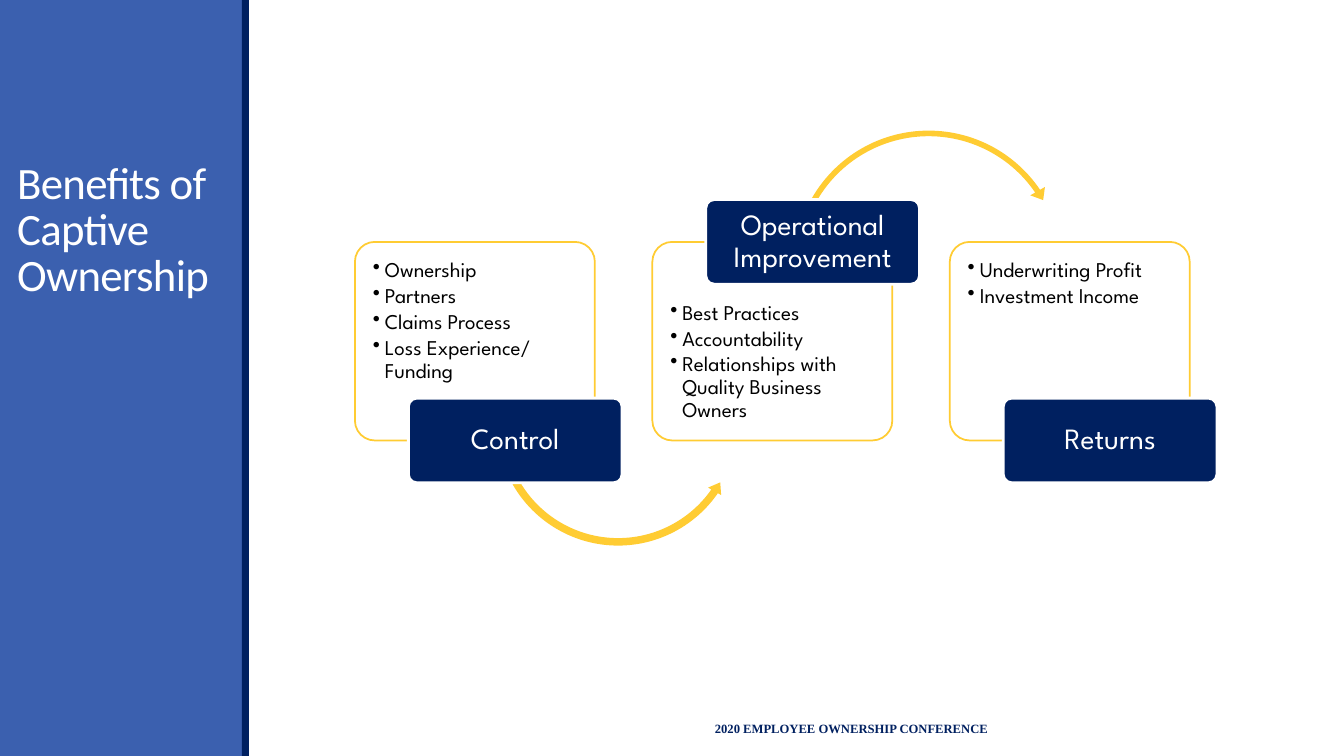
from dataclasses import dataclass
from typing import Optional

from lxml import etree
from pptx import Presentation
from pptx import util as u
from pptx.dml import color
from pptx.enum import shapes, text
from pptx.oxml import ns

COLORS = {
    "blue": "3B60AF",
    "navy": "002060",
    "gold": "FFCC33",
    "white": "FFFFFF",
    "black": "000000",
}
BODY_FONT = "League Spartan"
PANEL_LEFT, PANEL_TOP, PANEL_STEP = 3.52, 2.4, 2.95
PANEL_WIDTH, PANEL_HEIGHT = 2.38, 1.97
LABEL_WIDTH, LABEL_HEIGHT, LABEL_OFFSET = 2.12, 0.84, 0.53


@dataclass(frozen=True)
class Arrow:
    kind: shapes.MSO_SHAPE
    left: float
    top: float
    size: float
    adjustments: tuple[float, ...]


@dataclass(frozen=True)
class Benefit:
    name: str
    points: tuple[str, ...]
    label_on_top: bool = False
    arrow: Optional[Arrow] = None


BENEFITS = (
    Benefit(
        "Control",
        ("Ownership", "Partners", "Claims Process", "Loss Experience/\vFunding"),
        arrow=Arrow(shapes.MSO_SHAPE.LEFT_CIRCULAR_ARROW, 4.89, 2.97, 2.48,
                    (0.03, 3.09, 20.85, 90.25, 0.03)),
    ),
    Benefit(
        "Operational Improvement",
        ("Best Practices", "Accountability", "Relationships with Quality Business Owners"),
        label_on_top=True,
        arrow=Arrow(shapes.MSO_SHAPE.CIRCULAR_ARROW, 7.82, 1.24, 2.78,
                    (0.02, 2.74, 195.51, 125.76, 0.03)),
    ),
    Benefit("Returns", ("Underwriting Profit", "Investment Income")),
)


def rgb(name: str) -> color.RGBColor:
    return color.RGBColor.from_string(COLORS[name])


def add_filled(slide, kind, left: float, top: float, width: float, height: float,
               fill: str, line: Optional[str] = None, line_width: float = 1):
    shape = slide.shapes.add_shape(
        kind, u.Inches(left), u.Inches(top), u.Inches(width), u.Inches(height))
    shape.shadow.inherit = False
    shape.fill.solid()
    shape.fill.fore_color.rgb = rgb(fill)
    if line:
        shape.line.color.rgb = rgb(line)
        shape.line.width = u.Pt(line_width)
    else:
        shape.line.fill.background()
    return shape


def set_margins(frame, left: float, top: float, right: float, bottom: float) -> None:
    frame.margin_left, frame.margin_top = u.Inches(left), u.Inches(top)
    frame.margin_right, frame.margin_bottom = u.Inches(right), u.Inches(bottom)


def format_runs(paragraph, font: str, size: float, name: str, bold: bool = False) -> None:
    for run in paragraph.runs:
        run.font.name = font
        run.font.size = u.Pt(size)
        run.font.bold = bold
        run.font.color.rgb = rgb(name)


def add_bullet(paragraph) -> None:
    properties = paragraph._p.get_or_add_pPr()
    properties.set("marL", str(u.Inches(0.12)))
    properties.set("indent", str(u.Inches(-0.12)))
    etree.SubElement(properties, ns.qn("a:buChar")).set("char", "•")


def add_panel(slide, benefit: Benefit, left: float) -> None:
    panel = add_filled(slide, shapes.MSO_SHAPE.ROUNDED_RECTANGLE, left, PANEL_TOP,
                       PANEL_WIDTH, PANEL_HEIGHT, "white", "gold", 1.25)
    panel.adjustments[0] = 0.1
    fill_color = panel._element.spPr.find(ns.qn("a:solidFill"))[0]
    etree.SubElement(fill_color, ns.qn("a:alpha")).set("val", "90000")
    frame = panel.text_frame
    frame.word_wrap = True
    frame.vertical_anchor = text.MSO_ANCHOR.TOP
    set_margins(frame, 0.12, 0.54 if benefit.label_on_top else 0.12, 0.13, 0)
    for index, point in enumerate(benefit.points):
        paragraph = frame.add_paragraph() if index else frame.paragraphs[0]
        paragraph.text = point
        add_bullet(paragraph)
        paragraph.alignment = text.PP_ALIGN.LEFT
        paragraph.line_spacing = 0.9
        paragraph.space_after = u.Pt(2.25)
        format_runs(paragraph, BODY_FONT, 15, "black")


def add_arrow(slide, arrow: Arrow) -> None:
    shape = add_filled(slide, arrow.kind, arrow.left, arrow.top, arrow.size, arrow.size, "gold")
    for index, value in enumerate(arrow.adjustments):
        shape.adjustments[index] = value


def add_label(slide, benefit: Benefit, left: float) -> None:
    edge = PANEL_TOP if benefit.label_on_top else PANEL_TOP + PANEL_HEIGHT
    label = add_filled(slide, shapes.MSO_SHAPE.ROUNDED_RECTANGLE, left + LABEL_OFFSET,
                       edge - LABEL_HEIGHT / 2, LABEL_WIDTH, LABEL_HEIGHT,
                       "navy", "white", 2)
    label.adjustments[0] = 0.1
    frame = label.text_frame
    frame.word_wrap = True
    frame.vertical_anchor = text.MSO_ANCHOR.MIDDLE
    set_margins(frame, 0.04, 0.03, 0.04, 0.03)
    frame.text = benefit.name
    paragraph = frame.paragraphs[0]
    paragraph.alignment = text.PP_ALIGN.CENTER
    paragraph.line_spacing = 0.9
    format_runs(paragraph, BODY_FONT, 21, "white")


def add_sidebar(slide) -> None:
    title = slide.shapes.title
    for left, width, fill in ((0, 2.47, "blue"), (2.4, 0.07, "navy")):
        bar = add_filled(slide, shapes.MSO_SHAPE.RECTANGLE, left, 0, width, 7.5, fill)
        title._element.addprevious(bar._element)
    title.left, title.top = u.Inches(0.07), u.Inches(0.53)
    title.width, title.height = u.Inches(2.4), u.Inches(2.5)
    frame = title.text_frame
    frame.text = "Benefits of Captive Ownership"
    frame.word_wrap = True
    frame.auto_size = text.MSO_AUTO_SIZE.NONE
    frame.vertical_anchor = text.MSO_ANCHOR.BOTTOM
    paragraph = frame.paragraphs[0]
    paragraph.alignment = text.PP_ALIGN.LEFT
    paragraph.line_spacing = 0.85
    format_runs(paragraph, "Calibri", 32, "white")
    paragraph.runs[0].font._element.set("spc", "-50")


def add_footer(slide) -> None:
    footer = slide.shapes.add_textbox(
        u.Inches(5.97), u.Inches(7.03), u.Inches(5.08), u.Inches(0.4))
    frame = footer.text_frame
    frame.word_wrap = True
    frame.vertical_anchor = text.MSO_ANCHOR.MIDDLE
    frame.margin_left = u.Inches(1.12)
    frame.text = "2020 EMPLOYEE OWNERSHIP CONFERENCE"
    format_runs(frame.paragraphs[0], "Times New Roman", 9, "navy", bold=True)


def main() -> None:
    presentation = Presentation()
    presentation.slide_width = u.Inches(13.33)
    presentation.slide_height = u.Inches(7.5)
    slide = presentation.slides.add_slide(presentation.slide_layouts[5])
    add_sidebar(slide)
    add_footer(slide)
    for index, benefit in enumerate(BENEFITS):
        left = PANEL_LEFT + index * PANEL_STEP
        add_panel(slide, benefit, left)
        if benefit.arrow:
            add_arrow(slide, benefit.arrow)
        add_label(slide, benefit, left)
    presentation.save("out.pptx")


if __name__ == "__main__":
    main()
